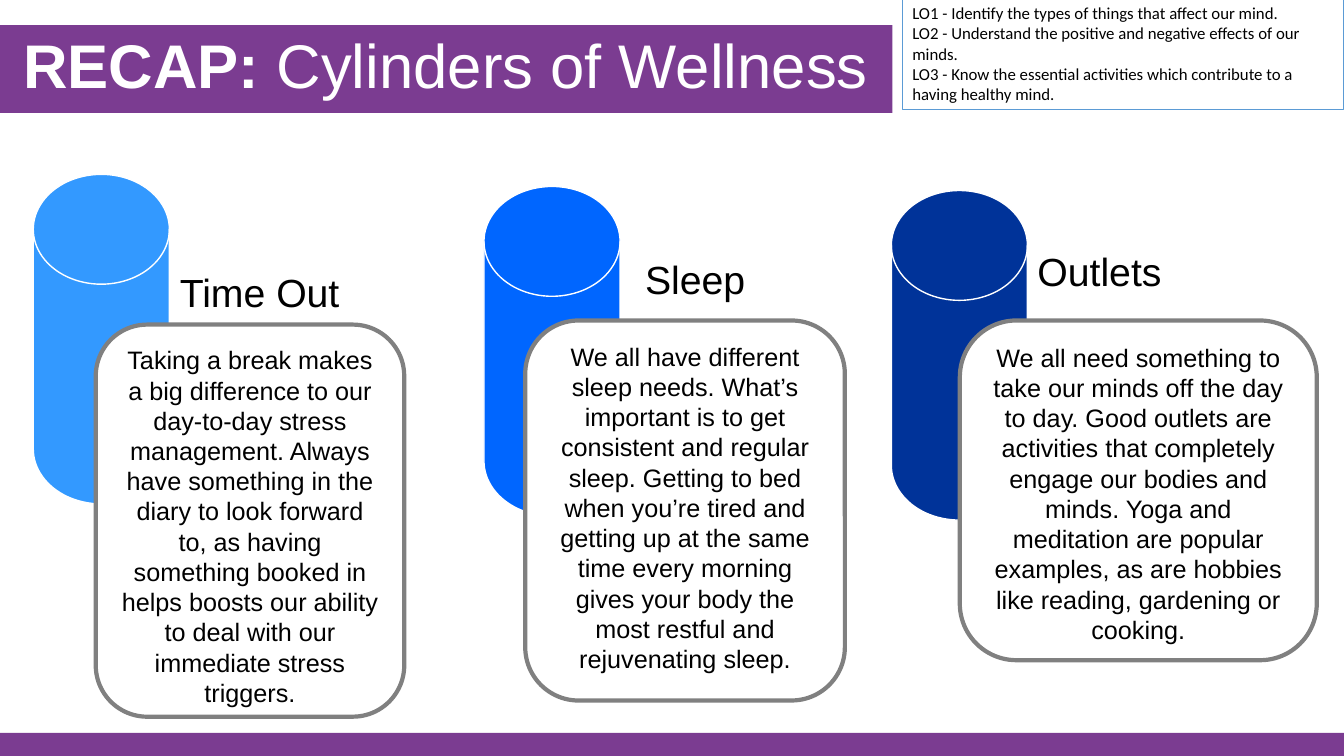
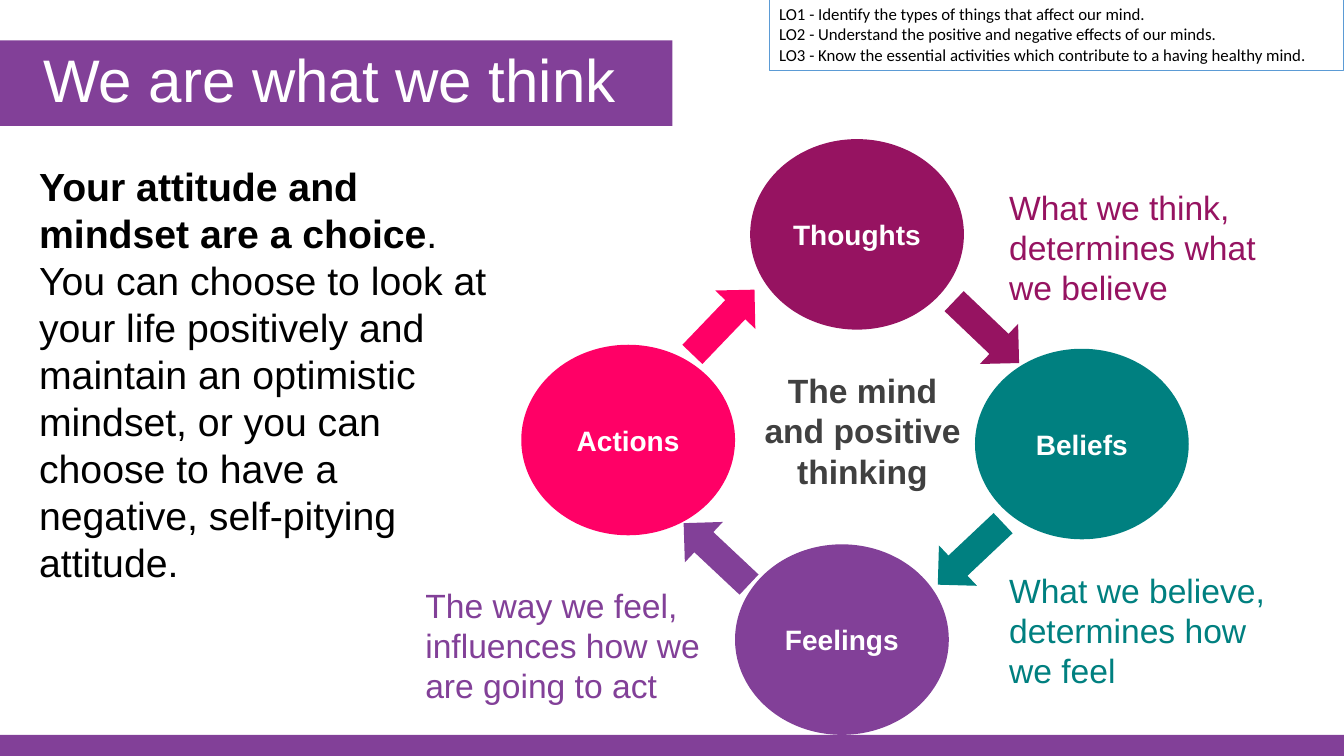
from dataclasses import dataclass
from typing import NamedTuple, Optional

from pptx import Presentation
from pptx.dml.color import RGBColor
from pptx.enum.shapes import MSO_SHAPE
from pptx.enum.text import MSO_ANCHOR, PP_ALIGN
from pptx.util import Inches, Pt

RECT, ROUND = MSO_SHAPE.RECTANGLE, MSO_SHAPE.ROUNDED_RECTANGLE
OVAL, ARROW = MSO_SHAPE.OVAL, MSO_SHAPE.RIGHT_ARROW
DISK = MSO_SHAPE.FLOWCHART_MAGNETIC_DISK
LEFT, MID = PP_ALIGN.LEFT, PP_ALIGN.CENTER
TOP, HALF = MSO_ANCHOR.TOP, MSO_ANCHOR.MIDDLE


@dataclass(frozen=True)
class Theme:
    font: str = "Arial"
    goal_font: str = "Calibri"
    black: str = "000000"
    white: str = "FFFFFF"
    grey: str = "808080"
    dark: str = "404040"
    edge: str = "5B9BD5"
    grape: str = "7B3C91"
    violet: str = "824098"
    plum: str = "961361"
    teal: str = "008080"
    pink: str = "FF0066"
    sky: str = "3399FF"
    blue: str = "0066FF"
    navy: str = "003399"
    head: float = 44
    head_alt: float = 42.9
    large: float = 28
    note: float = 24
    node: float = 20
    body: float = 18
    goal: float = 12


T = Theme()


class Box(NamedTuple):
    x: float
    y: float
    w: float
    h: float


class Run(NamedTuple):
    text: str
    bold: bool = False


@dataclass(frozen=True)
class Style:
    size: float
    color: str = T.black
    align: PP_ALIGN = LEFT
    anchor: MSO_ANCHOR = TOP
    font: str = T.font
    inset: float = 0.1
    space: Optional[float] = None


@dataclass(frozen=True)
class Pillar:
    name: str
    color: str
    disk: tuple[float, float]
    label: tuple[float, float]
    card: Box
    text: str


@dataclass(frozen=True)
class Stage:
    name: str
    color: str
    oval: tuple[float, float]
    arrow: tuple[float, float]
    turn: float


@dataclass(frozen=True)
class Note:
    text: str
    color: str
    spot: tuple[float, float]


GOALS = [
    [Run("LO1 - Identify the types of things that affect our mind.")],
    [Run("LO2 - Understand the positive and negative effects of our minds.")],
    [Run("LO3 - Know the essential activities which contribute to a having healthy mind.")],
]

PILLARS = [
    Pillar("Sleep", T.blue, (4.8, 1.85), (5.82, 2.48), Box(5.21, 3.18, 3.17, 3.77),
           "We all have different sleep needs. What’s important is to get consistent "
           "and regular sleep. Getting to bed when you’re tired and getting up at the "
           "same time every morning gives your body the most restful and rejuvenating sleep."),
    Pillar("Time Out", T.sky, (0.33, 1.73), (1.5, 2.61), Box(0.95, 3.22, 3.06, 3.89),
           "Taking a break makes a big difference to our day-to-day stress management. "
           "Always have something in the diary to look forward to, as having something "
           "booked in helps boosts our ability to deal with our immediate stress triggers."),
    Pillar("Outlets", T.navy, (8.84, 1.89), (9.83, 2.4), Box(9.52, 3.18, 3.54, 3.37),
           "We all need something to take our minds off the day to day. Good outlets are "
           "activities that completely engage our bodies and minds. Yoga and meditation "
           "are popular examples, as are hobbies like reading, gardening or cooking."),
]

STAGES = [
    Stage("Thoughts", T.plum, (7.44, 1.38), (9.34, 3.02), 43.6),
    Stage("Beliefs", T.teal, (9.67, 3.46), (9.18, 5.22), 136.7),
    Stage("Feelings", T.violet, (7.29, 5.4), (6.66, 5.22), 223.2),
    Stage("Actions", T.pink, (5.17, 3.42), (6.73, 2.92), 313.8),
]

NOTES = [
    Note("What we think, determines what we believe", T.plum, (9.91, 1.8)),
    Note("What we believe, determines how we feel", T.teal, (9.91, 5.6)),
    Note("The way we feel, influences how we are going to act", T.violet, (4.12, 5.75)),
]


# Basic parts
def rgb(code: str) -> RGBColor:
    return RGBColor.from_string(code)


def write(shape, paras: list[list[Run]], style: Style) -> None:
    frame = shape.text_frame
    frame.word_wrap = True
    frame.vertical_anchor = style.anchor
    frame.margin_left = Inches(style.inset)
    for i, runs in enumerate(paras):
        para = frame.add_paragraph() if i else frame.paragraphs[0]
        para.alignment = style.align
        if style.space:
            para.line_spacing = style.space
        for item in runs:
            run = para.add_run()
            run.text = item.text
            run.font.name = style.font
            run.font.size = Pt(style.size)
            run.font.bold = item.bold
            run.font.color.rgb = rgb(style.color)


def draw(slide, kind: MSO_SHAPE, box: Box, fill: str,
         line: Optional[str] = None, width: float = 1):
    shape = slide.shapes.add_shape(kind, *map(Inches, box))
    shape.shadow.inherit = False
    shape.fill.solid()
    shape.fill.fore_color.rgb = rgb(fill)
    if line:
        shape.line.color.rgb = rgb(line)
        shape.line.width = Pt(width)
    else:
        shape.line.fill.background()
    return shape


def label(slide, box: Box, runs: list[Run], style: Style) -> None:
    write(slide.shapes.add_textbox(*map(Inches, box)), [runs], style)


# Shared frame: footer, title band and goals
def footer(slide, top: float, color: str) -> None:
    draw(slide, RECT, Box(0, top, 13.33, 7.5 - top), color)


def title(slide, box: Box, color: str, runs: list[Run], size: float, inset: float) -> None:
    band = draw(slide, RECT, box, color)
    write(band, [runs], Style(size, T.white, anchor=HALF, inset=inset, space=0.9))


def goals(slide, box: Box) -> None:
    panel = draw(slide, RECT, box, T.white, T.edge, 0.75)
    write(panel, GOALS, Style(T.goal, font=T.goal_font))


# Slide 1: three cylinders with cards
def recap(slide) -> None:
    footer(slide, 7.27, T.grape)
    for item in PILLARS:
        draw(slide, DISK, Box(*item.disk, 1.35, 3.27), item.color, T.white)
        label(slide, Box(*item.label, 2.15, 0.57), [Run(item.name)],
              Style(T.large, align=MID))
        card = draw(slide, ROUND, item.card, T.white, T.grey, 3)
        write(card, [[Run(item.text)]], Style(T.body, align=MID))
    title(slide, Box(0, 0.25, 8.85, 0.87), T.grape,
          [Run("RECAP: ", True), Run("Cylinders of Wellness")], T.head, 0.23)
    goals(slide, Box(8.95, -0.02, 4.38, 1.11))


# Slide 2: cycle of four stages
def cycle(slide) -> None:
    footer(slide, 7.29, T.violet)
    title(slide, Box(0, 0.4, 6.67, 0.85), T.violet,
          [Run("We are what we think")], T.head_alt, 0.43)
    label(slide, Box(0.29, 1.56, 4.73, 4.34), [
        Run("Your attitude and mindset are a choice", True),
        Run(". You can choose to look at your life positively and maintain an optimistic "
            "mindset, or you can choose to have a negative, self-pitying attitude."),
    ], Style(T.large))
    for note in NOTES:
        label(slide, Box(*note.spot, 3.01, 1.31), [Run(note.text)],
              Style(T.note, note.color))
    for stage in STAGES:
        oval = draw(slide, OVAL, Box(*stage.oval, 2.12, 1.89), stage.color)
        write(oval, [[Run(stage.name, True)]], Style(T.node, T.white, MID, HALF))
    label(slide, Box(7.42, 3.62, 2.27, 1.31),
          [Run("The mind and positive thinking", True)], Style(T.note, T.dark, MID))
    for stage in STAGES:
        arrow = draw(slide, ARROW, Box(*stage.arrow, 0.89, 0.55), stage.color)
        arrow.rotation = stage.turn
    goals(slide, Box(7.63, -0.01, 5.7, 0.71))


def main() -> None:
    deck = Presentation()
    deck.slide_width, deck.slide_height = Inches(13.33), Inches(7.5)
    for build in (recap, cycle):
        build(deck.slides.add_slide(deck.slide_layouts[6]))
    deck.save("out.pptx")


if __name__ == "__main__":
    main()
